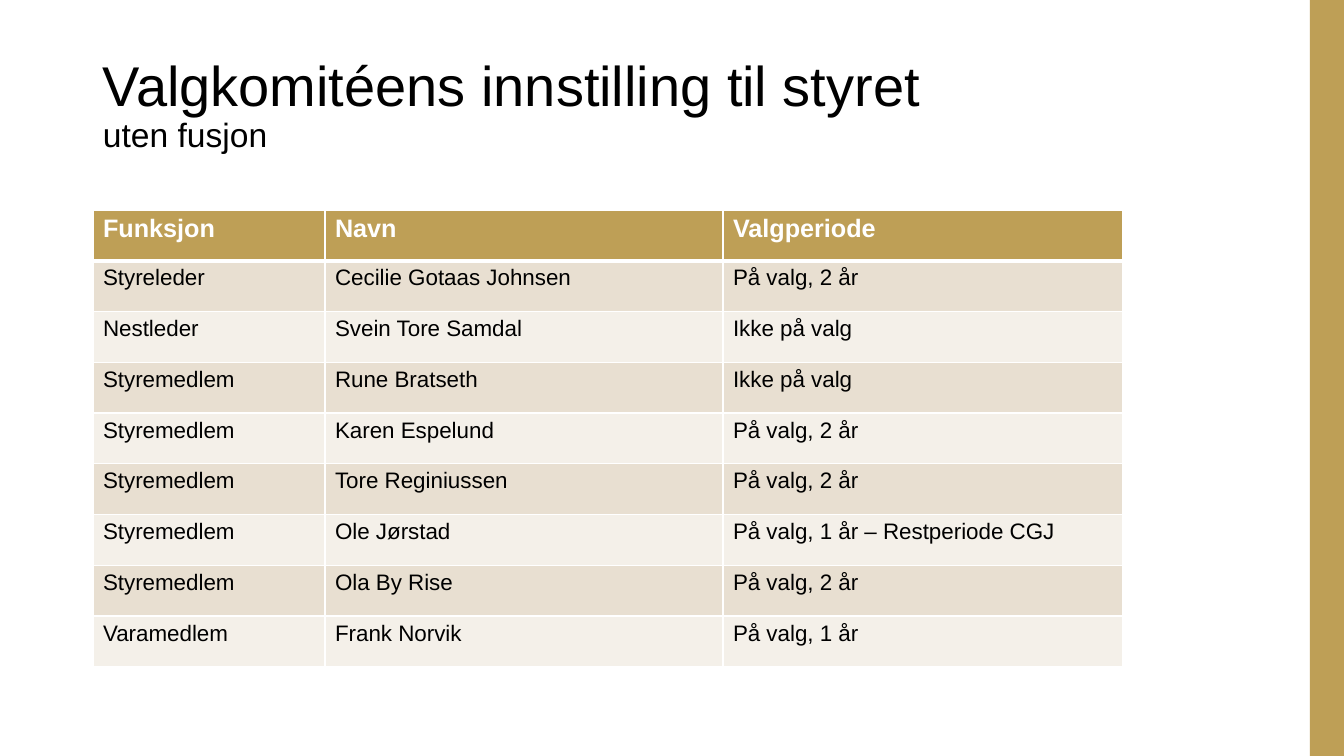
from dataclasses import dataclass

from lxml import etree
from pptx import Presentation
from pptx import util as u
from pptx.dml.color import RGBColor
from pptx.enum import shapes, text
from pptx.oxml.ns import qn


@dataclass(frozen=True)
class Theme:
    font: str = "Arial"
    gold: str = "BE9F56"
    dark_band: str = "E8DFD1"
    light_band: str = "F4F0E9"
    white: str = "FFFFFF"
    black: str = "000000"
    title_size: int = 40
    subtitle_size: int = 24
    header_size: int = 18
    body_size: int = 16


THEME = Theme()
PX_PER_INCH = 100.8

HEADERS = ("Funksjon", "Navn", "Valgperiode")
MEMBERS = (
    ("Styreleder", "Cecilie Gotaas Johnsen", "På valg, 2 år"),
    ("Nestleder", "Svein Tore Samdal", "Ikke på valg"),
    ("Styremedlem", "Rune Bratseth", "Ikke på valg"),
    ("Styremedlem", "Karen Espelund", "På valg, 2 år"),
    ("Styremedlem", "Tore Reginiussen", "På valg, 2 år"),
    ("Styremedlem", "Ole Jørstad", "På valg, 1 år – Restperiode CGJ"),
    ("Styremedlem", "Ola By Rise", "På valg, 2 år"),
    ("Varamedlem", "Frank Norvik", "På valg, 1 år"),
)


def px(length):
    return u.Inches(length / PX_PER_INCH)


def write(paragraph, words, size=THEME.body_size, color=THEME.black, bold=False):
    run = paragraph.add_run()
    run.text = words
    run.font.name = THEME.font
    run.font.size = u.Pt(size)
    run.font.bold = bold
    run.font.color.rgb = RGBColor.from_string(color)


def set_borders(cell, **widths):
    properties = cell._tc.get_or_add_tcPr()
    for side in ("L", "R", "T", "B"):
        width = u.Pt(widths.get(side, 1))
        line = etree.SubElement(properties, qn(f"a:ln{side}"), w=str(width))
        fill = etree.SubElement(line, qn("a:solidFill"))
        etree.SubElement(fill, qn("a:srgbClr"), val=THEME.white)


def add_side_band(slide, left, top, width, height):
    band = slide.shapes.add_shape(
        shapes.MSO_SHAPE.RECTANGLE, px(left), px(top), px(width), px(height))
    band.shadow.inherit = False
    band.fill.solid()
    band.fill.fore_color.rgb = RGBColor.from_string(THEME.gold)
    band.line.fill.background()


def add_title(slide, left, top, width, height):
    box = slide.shapes.add_textbox(px(left), px(top), px(width), px(height))
    frame = box.text_frame
    frame.word_wrap = True
    frame.vertical_anchor = text.MSO_ANCHOR.BOTTOM
    paragraph = frame.paragraphs[0]
    paragraph.line_spacing = 0.9
    write(paragraph, "Valgkomitéens innstilling til styret ", size=THEME.title_size)
    paragraph.add_line_break()
    write(paragraph, "uten fusjon", size=THEME.subtitle_size)


def add_board_table(slide, left, top, column_widths, height):
    rows = (HEADERS, *MEMBERS)
    table = slide.shapes.add_table(
        len(rows), len(HEADERS), px(left), px(top),
        px(sum(column_widths)), px(height)).table
    for column, width in zip(table.columns, column_widths):
        column.width = px(width)
    for row_index, row in enumerate(rows):
        table.rows[row_index].height = px(height / len(rows))
        if row_index == 0:
            fill = THEME.gold
            borders = {"B": 3}
            style = {"size": THEME.header_size, "color": THEME.white, "bold": True}
        else:
            fill = THEME.dark_band if row_index % 2 else THEME.light_band
            borders = {"T": 3} if row_index == 1 else {}
            style = {}
        for column_index, words in enumerate(row):
            cell = table.cell(row_index, column_index)
            set_borders(cell, **borders)
            cell.fill.solid()
            cell.fill.fore_color.rgb = RGBColor.from_string(fill)
            write(cell.text_frame.paragraphs[0], words, **style)


def add_board_slide(presentation):
    slide = presentation.slides.add_slide(presentation.slide_layouts[6])
    add_side_band(slide, 1310, 0, 34, 756)
    add_title(slide, 93, 40, 1059, 120)
    add_board_table(slide, 93, 210, (232, 398, 400), 457)


def main():
    presentation = Presentation()
    presentation.slide_width = px(1344)
    presentation.slide_height = px(756)
    add_board_slide(presentation)
    presentation.save("out.pptx")


if __name__ == "__main__":
    main()
